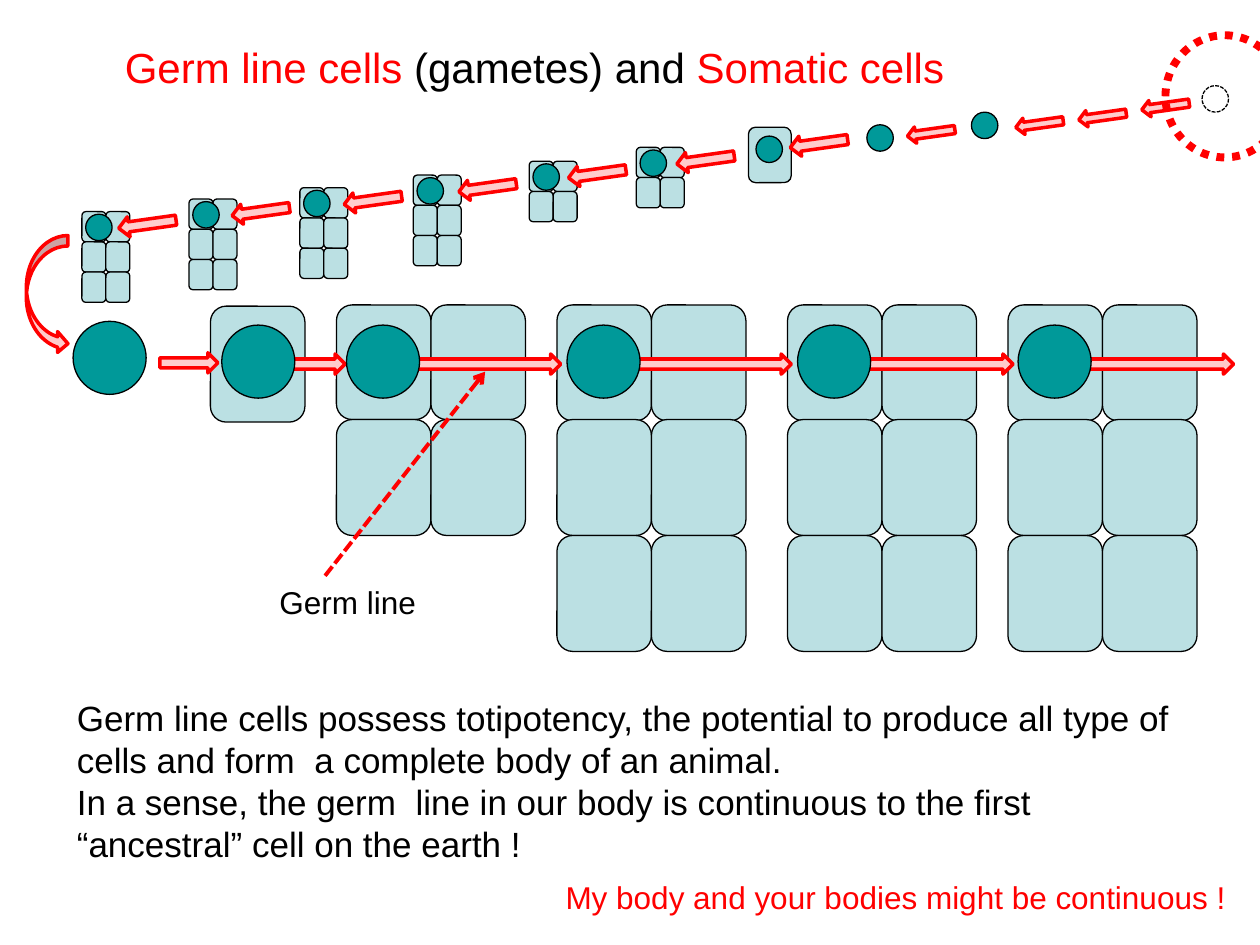
from lxml import etree
from pptx import Presentation
from pptx.dml.color import RGBColor
from pptx.enum.dml import MSO_LINE
from pptx.enum.shapes import MSO_CONNECTOR, MSO_SHAPE
from pptx.enum.text import MSO_ANCHOR, MSO_AUTO_SIZE, PP_ALIGN
from pptx.oxml.ns import qn
from pptx.util import Pt

PX = 9144
FONT = "Arial"
COLORS = {
    "ink": "000000",
    "red": "FF0000",
    "pink": "FFCCCC",
    "cell": "BBE0E3",
    "germ": "009999",
}
ROUNDED, OVAL = MSO_SHAPE.ROUNDED_RECTANGLE, MSO_SHAPE.OVAL
RIGHT, LEFT = MSO_SHAPE.RIGHT_ARROW, MSO_SHAPE.LEFT_ARROW
CURVED = MSO_SHAPE.CURVED_RIGHT_ARROW
STRAIGHT = MSO_CONNECTOR.STRAIGHT
DASH, DOT = MSO_LINE.SQUARE_DOT, MSO_LINE.ROUND_DOT
TOP, ALIGN_LEFT = MSO_ANCHOR.TOP, PP_ALIGN.LEFT
GROW = MSO_AUTO_SIZE.SHAPE_TO_FIT_TEXT


def color(name):
    """Return the named palette colour."""
    return RGBColor.from_string(COLORS[name])


def emu(lengths):
    """Turn px lengths into EMU."""
    return [length * PX for length in lengths]


def draw(shapes, kind, box, fill, line="ink", width=0.75, dash=None):
    """Add one preset shape; a fill of None leaves it hollow."""
    shape = shapes.add_shape(kind, *emu(box))
    shape.shadow.inherit = False
    if fill:
        shape.fill.solid()
        shape.fill.fore_color.rgb = color(fill)
    else:
        shape.fill.background()
    shape.line.color.rgb = color(line)
    shape.line.width = Pt(width)
    if dash:
        shape.line.dash_style = dash
    return shape


def arrow(shapes, kind, box, rotation=0):
    """Add a pink block arrow with a red outline."""
    draw(shapes, kind, box, "pink", "red", 2).rotation = rotation


def germ_cell(shapes, left, top, size):
    """Add a round germ line cell."""
    draw(shapes, OVAL, (left, top, size, size), "germ")


def body_cells(shapes, box, columns, rows):
    """Fill a box with an even grid of somatic cells."""
    left, top, width, height = box
    for row in range(rows):
        for column in range(columns):
            cell = (left + column * width // columns, top + row * height // rows,
                    width // columns, -(-height // rows))
            draw(shapes, ROUNDED, cell, "cell")


def write(shape, box, paragraphs, size, wrap=False):
    """Place a text shape and fill it run by run."""
    shape.left, shape.top, shape.width, shape.height = emu(box)
    frame = shape.text_frame
    frame.word_wrap = wrap
    frame.auto_size = GROW
    frame.vertical_anchor = TOP
    for index, spans in enumerate(paragraphs):
        para = frame.add_paragraph() if index else frame.paragraphs[0]
        para.alignment = ALIGN_LEFT
        para.space_before = Pt(0)
        for text, ink in spans:
            span = para.add_run()
            span.text = text
            span.font.name = FONT
            span.font.size = Pt(size)
            span.font.color.rgb = color(ink)
    return frame


def label(page, box, text, ink):
    """Add a one-line text box."""
    write(page.shapes.add_textbox(*emu(box)), box, [[(text, ink)]], 18)


def headline(page, box):
    """Fill the title placeholder."""
    spans = [("Germ line cells", "red"), (" (gametes) and ", "ink"), ("Somatic cells", "red")]
    write(page.shapes.title, box, [spans], 24)


def explanation(page, box):
    """Fill the body placeholder with two unbulleted paragraphs."""
    texts = [
        "Germ line cells possess totipotency, the potential to produce all type of "
        "cells and form  a complete body of an animal.",
        "In a sense, the germ  line in our body is continuous to the first "
        "“ancestral” cell on the earth !",
    ]
    paragraphs = [[(text, "ink")] for text in texts]
    frame = write(page.placeholders[1], box, paragraphs, 20, wrap=True)
    for para in frame.paragraphs:
        properties = para._p.get_or_add_pPr()
        properties.set("marL", "0")
        properties.set("indent", "0")
        etree.SubElement(properties, qn("a:buNone"))


def pointer(page, start, end):
    """Add the dashed line that points at the germ line."""
    line = page.shapes.add_connector(STRAIGHT, *emu(start + end))
    line.line.color.rgb = color("red")
    line.line.width = Pt(2.25)
    line.line.dash_style = DASH
    properties = line.element.spPr
    etree.SubElement(properties.find(qn("a:ln")), qn("a:tailEnd"), type="arrow")
    etree.SubElement(properties, qn("a:effectLst"))


def present_line(page, left, top):
    """Draw the growing bodies and the germ line running through them."""
    shapes = page.shapes
    bodies = [(209, 2, 1), (384, 2, 3), (567, 2, 3), (742, 2, 3)]
    body_cells(shapes, (left + 109, top + 1, 75, 92), 1, 1)
    for offset, columns, rows in bodies:
        body_cells(shapes, (left + offset, top, 150, 275 * rows // 3), columns, rows)
    body_cells(shapes, (left + 209, top + 91, 150, 92), 2, 1)
    pointer(page, (left + 200, top + 215), (left + 327, top + 53))
    for offset, drop, width in [(69, 38, 46), (170, 39, 46), (249, 39, 138),
                                (432, 39, 138), (608, 39, 138), (803, 39, 118)]:
        arrow(shapes, RIGHT, (left + offset, top + drop, width, 16))
    germ_cell(shapes, left, top + 13, 58)
    for offset in [118] + [body[0] + 8 for body in bodies]:
        germ_cell(shapes, left + offset, top + 16, 58)


def ancestor_line(page, left, top):
    """Draw the receding chain of ancestors back to the first cell."""
    shapes = page.shapes.add_group_shape().shapes
    ancestors = [(44, 100, 3, 29), (129, 90, 3, 34), (217, 81, 3, 35),
                 (307, 71, 3, 36), (399, 60, 2, 31), (484, 49, 2, 32)]
    for offset, drop, rows, gap in ancestors:
        x, y = left + offset, top + drop
        body_cells(shapes, (x, y, 38, 24 * rows), 2, rows)
        germ_cell(shapes, x + 3, y + 2, 21)
        arrow(shapes, LEFT, (x + gap, y + 2, 46, 16), 352)
    arrow(shapes, CURVED, (left, top + 119, 33, 94))
    body_cells(shapes, (left + 573, top + 33, 34, 44), 1, 1)
    arrow(shapes, LEFT, (left + 606, top + 38, 46, 16), 352)
    for offset, drop in [(579, 40), (667, 31), (750, 21)]:
        germ_cell(shapes, left + offset, top + drop, 21)
    for offset, drop in [(699, 31), (785, 24), (835, 18), (885, 10)]:
        arrow(shapes, LEFT, (left + offset, top + drop, 38, 13), 352)
    draw(shapes, OVAL, (left + 933, top, 21, 21), None, dash=DASH)


def main():
    """Build the slide and save it."""
    deck = Presentation()
    deck.slide_width, deck.slide_height = emu((1000, 750))
    page = deck.slides.add_slide(deck.slide_layouts[1])
    headline(page, (89, 28, 672, 50))
    explanation(page, (51, 548, 913, 145))
    present_line(page, 58, 242)
    label(page, (212, 458, 130, 40), "Germ line", "ink")
    ancestor_line(page, 21, 68)
    label(page, (439, 692, 549, 40), "My body and your bodies might be continuous !", "red")
    draw(page.shapes, OVAL, (925, 28, 94, 97), None, "red", 4.5, DOT)


    deck.save("out.pptx")


if __name__ == "__main__":
    main()
